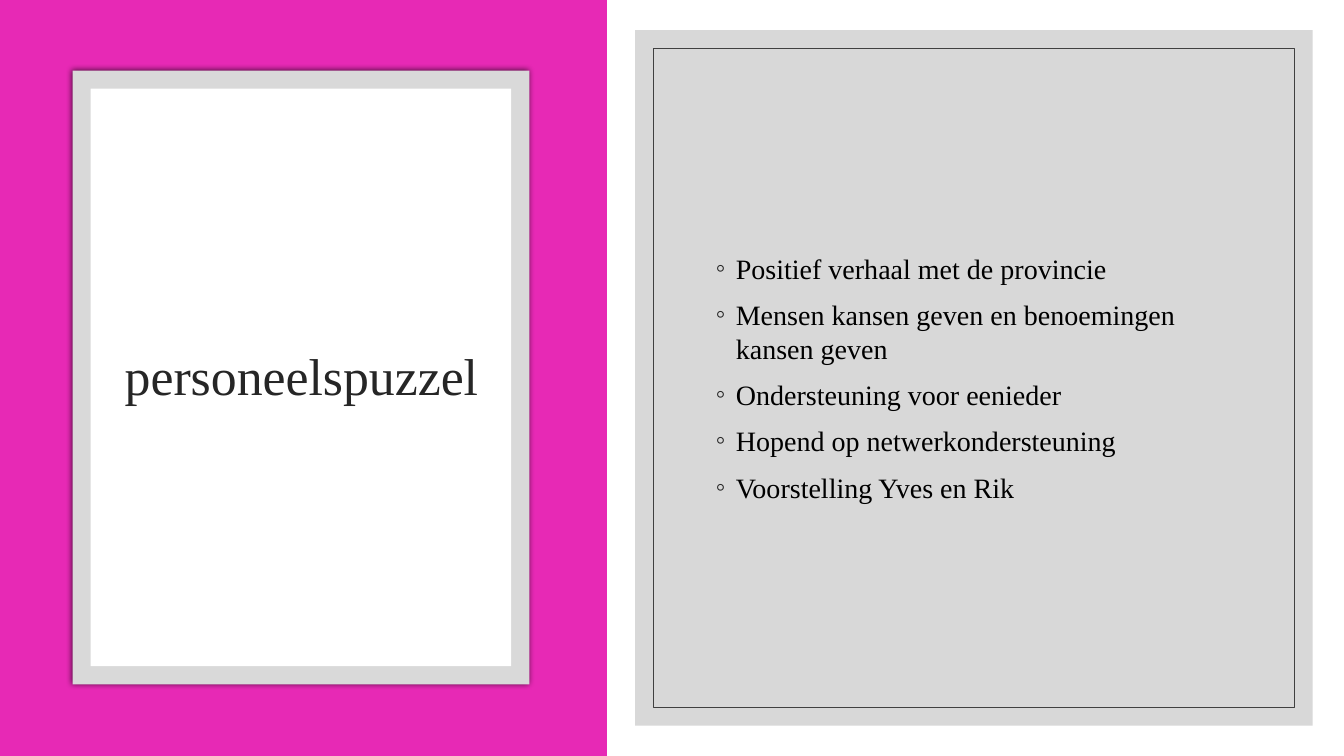
import pptx
import pptx.util
import pptx.dml.color
import pptx.enum.shapes
import pptx.enum.text
import pptx.oxml
import pptx.oxml.ns

PX = 9144  # one px is a hundredth of an inch
RGB = pptx.dml.color.RGBColor
WHITE = RGB(0xFF, 0xFF, 0xFF)
PINK = RGB(0xE7, 0x29, 0xB5)
PALE = RGB(0xD9, 0xD9, 0xD9)
GREY = RGB(0xBF, 0xBF, 0xBF)
DARK = RGB(0x40, 0x40, 0x40)
INK = RGB(0x26, 0x26, 0x26)
BLACK = RGB(0, 0, 0)
FONT = "Times New Roman"
NS = pptx.oxml.ns.nsdecls("a")

deck = pptx.Presentation()
deck.slide_width = 1333 * PX
deck.slide_height = 750 * PX
slide = deck.slides.add_slide(deck.slide_layouts[6])


def add_box(left, top, width, height, fill=None, line=None):
    box = slide.shapes.add_shape(
        pptx.enum.shapes.MSO_SHAPE.RECTANGLE,
        left * PX, top * PX, width * PX, height * PX)
    box.shadow.inherit = False
    if fill is None:
        box.fill.background()
    else:
        box.fill.solid()
        box.fill.fore_color.rgb = fill
    if line is None:
        box.line.fill.background()
    else:
        box.line.color.rgb = line
        box.line.width = pptx.util.Pt(0.5)
    return box


def add_text(left, top, width, height):
    frame = slide.shapes.add_textbox(
        left * PX, top * PX, width * PX, height * PX).text_frame
    frame.word_wrap = True
    frame.vertical_anchor = pptx.enum.text.MSO_ANCHOR.MIDDLE
    return frame


# Background and pink half
add_box(0, 0, 1333, 750, WHITE)
add_box(-1, 0, 603, 750, PINK)

# Title card with a soft shadow
card = add_box(72, 70, 453, 609, PALE)
glow = pptx.oxml.parse_xml(
    f'<a:outerShdw {NS} blurRad="50800" dist="0" dir="0" algn="ctr" rotWithShape="0">'
    '<a:srgbClr val="000000"><a:alpha val="66000"/></a:srgbClr></a:outerShdw>')
card._element.spPr.find(pptx.oxml.ns.qn("a:effectLst")).append(glow)
add_box(90, 88, 417, 573, WHITE)

# Title
para = add_text(108, 130, 382, 491).paragraphs[0]
para.alignment = pptx.enum.text.PP_ALIGN.CENTER
para.line_spacing = 0.9
run = para.add_run()
run.text = "personeelspuzzel"
run.font.name = FONT
run.font.size = pptx.util.Pt(37)
run.font.color.rgb = INK

# Grey panel, 60 % opaque, with a thin frame
panel = add_box(630, 30, 672, 690, GREY)
tint = panel._element.spPr.find(".//" + pptx.oxml.ns.qn("a:srgbClr"))
tint.append(pptx.oxml.parse_xml(f'<a:alpha {NS} val="60000"/>'))
add_box(648, 48, 636, 654, line=DARK)

# Bullet list
points = [
    "Positief verhaal met de provincie",
    "Mensen kansen geven en benoemingen kansen geven",
    "Ondersteuning voor eenieder",
    "Hopend op netwerkondersteuning",
    "Voorstelling Yves en Rik",
]
body = add_text(700, 102, 533, 545)
for i, point in enumerate(points):
    para = body.add_paragraph() if i else body.paragraphs[0]
    props = para._p.get_or_add_pPr()
    props.set("marL", str(20 * PX))
    props.set("indent", str(-20 * PX))
    for mark in (f'<a:buClr {NS}><a:srgbClr val="{INK}"/></a:buClr>',
                 f'<a:buFont {NS} typeface="{FONT}"/>',
                 f'<a:buChar {NS} char="◦"/>'):
        props.append(pptx.oxml.parse_xml(mark))
    if i:
        para.space_before = pptx.util.Pt(9)
    run = para.add_run()
    run.text = point
    run.font.name = FONT
    run.font.size = pptx.util.Pt(20)
    run.font.color.rgb = BLACK

deck.save("out.pptx")
